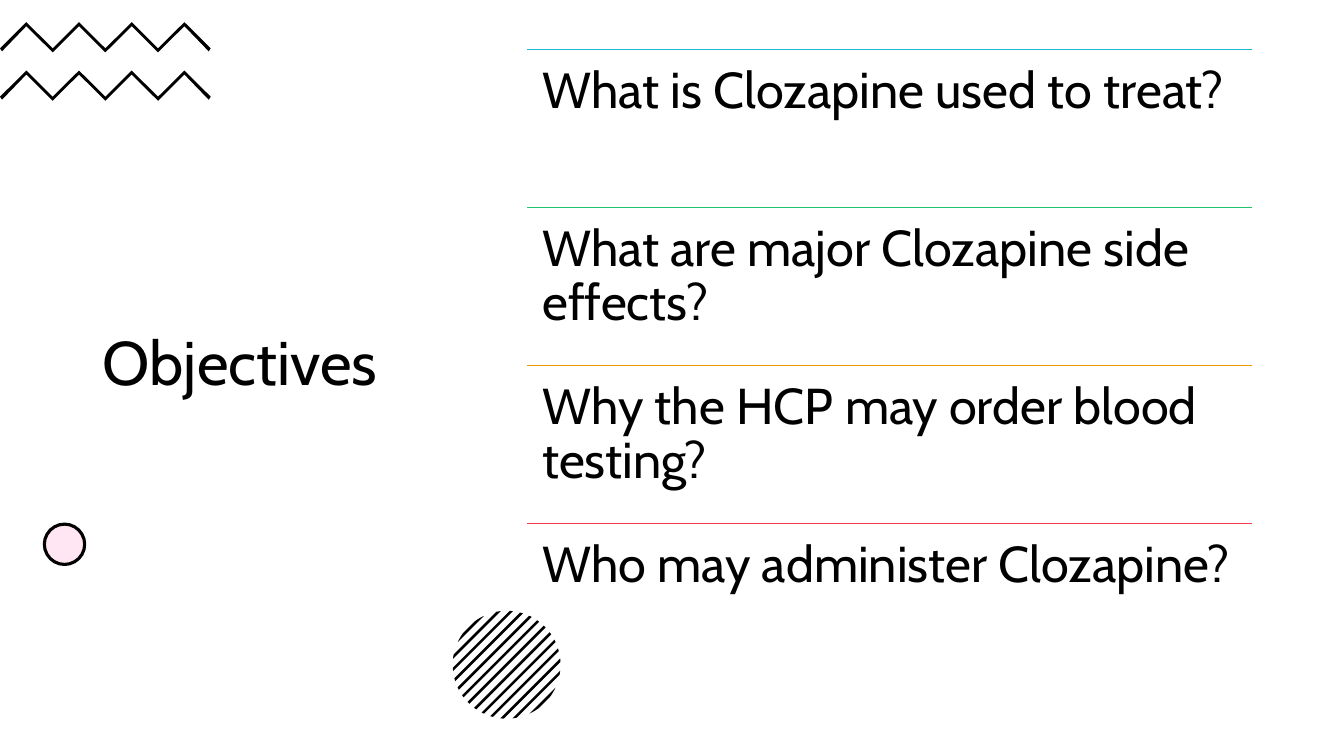
"""Build the Objectives slide with four ruled questions."""
import math
from dataclasses import dataclass

import pptx
import pptx.dml.color
import pptx.enum.shapes
import pptx.enum.text
import pptx.util
from lxml import etree

Inches = pptx.util.Inches
Pt = pptx.util.Pt


@dataclass(frozen=True)
class Theme:
    """Colours, font and sizes of the slide."""
    font: str = "Cabin"
    title_size: int = 44
    question_size: int = 36
    ink: str = "000000"
    paper: str = "FFFFFF"
    blush: str = "FFE6F2"
    rules: tuple = ("1EB9D3", "21C46B", "EA9600", "F43B56")


THEME = Theme()
QUESTIONS = (
    "What is Clozapine used to treat?",
    "What are major Clozapine side effects?",
    "Why the HCP may order blood testing?",
    "Who may administer Clozapine?",
)


def rgb(value):
    """Return the colour for a hex string."""
    return pptx.dml.color.RGBColor.from_string(value)


def write(frame, text, size):
    """Put one left-aligned paragraph in a text frame."""
    frame.word_wrap = True
    frame.text = text
    paragraph = frame.paragraphs[0]
    paragraph.alignment = pptx.enum.text.PP_ALIGN.LEFT
    paragraph.line_spacing = 0.9
    font = paragraph.runs[0].font
    font.name = THEME.font
    font.size = Pt(size)
    font.color.rgb = rgb(THEME.ink)


def add_outline(slide, points):
    """Draw a closed ink-filled outline through points given in inches."""
    corners = [(Inches(x), Inches(y)) for x, y in points]
    builder = slide.shapes.build_freeform(*corners[0])
    builder.add_line_segments(corners[1:], close=True)
    outline = builder.convert_to_shape()
    outline.shadow.inherit = False
    outline.fill.solid()
    outline.fill.fore_color.rgb = rgb(THEME.ink)
    outline.line.fill.background()


def add_title(slide, left, top, width, height):
    """Place the slide title in its box."""
    title = slide.shapes.title
    title.left, title.top = Inches(left), Inches(top)
    title.width, title.height = Inches(width), Inches(height)
    write(title.text_frame, "Objectives", THEME.title_size)
    title.text_frame.vertical_anchor = pptx.enum.text.MSO_ANCHOR.MIDDLE


def add_zigzags(slide, left, top, width, height):
    """Draw two zigzag bands, one at each end of the box."""
    band, stroke, inset, bends = 0.3, 0.04, 0.02, 8
    step = width / bends
    for band_top in (top, top + height - band):
        upper = [(left + i * step, band_top + (0 if i % 2 else band - stroke))
                 for i in range(bends + 1)]
        lower = [(x, y + stroke) for x, y in upper[1:-1]]
        tips = [(left + inset, band_top + band - 0.01),
                (left + width - inset, band_top + band - 0.01)]
        add_outline(slide, upper + [tips[1]] + lower[::-1] + [tips[0]])


def add_dot(slide, left, top, size):
    """Draw the blush dot with its ink outline."""
    dot = slide.shapes.add_shape(
        pptx.enum.shapes.MSO_SHAPE.OVAL,
        Inches(left), Inches(top), Inches(size), Inches(size))
    dot.shadow.inherit = False
    dot.fill.solid()
    dot.fill.fore_color.rgb = rgb(THEME.blush)
    dot.line.color.rgb = rgb(THEME.ink)
    dot.line.width = Pt(2.25)


def add_hatched_disc(slide, left, top, size):
    """Fill a disc with rising diagonal stripes."""
    radius = size / 2
    pitch, half_stripe, reach = 0.086, 0.013, 6
    for stripe in range(-reach, reach + 1):
        lower_ends, upper_ends = [], []
        for part in (-1, -0.5, 0, 0.5, 1):
            offset = stripe * pitch + part * half_stripe
            half_chord = math.sqrt(max(radius ** 2 - offset ** 2, 0))
            for ends, reach_along in ((lower_ends, -half_chord), (upper_ends, half_chord)):
                ends.append((left + radius + (offset + reach_along) / math.sqrt(2),
                             top + radius + (offset - reach_along) / math.sqrt(2)))
        add_outline(slide, lower_ends + upper_ends[::-1])


def add_questions(slide, left, top, width, height):
    """Stack the questions in equal rows, each under a coloured rule."""
    row_height = height / len(QUESTIONS)
    for row, (question, colour) in enumerate(zip(QUESTIONS, THEME.rules)):
        row_top = Inches(top + row * row_height)
        rule = slide.shapes.add_connector(
            pptx.enum.shapes.MSO_CONNECTOR.STRAIGHT,
            Inches(left), row_top, Inches(left + width), row_top)
        rule.line.color.rgb = rgb(colour)
        rule.line.width = Pt(1)
        etree.SubElement(rule._element.spPr, pptx.oxml.ns.qn("a:effectLst"))
        frame = slide.shapes.add_textbox(
            Inches(left), row_top, Inches(width), Inches(row_height)).text_frame
        frame.margin_left = frame.margin_right = Inches(0.15)
        frame.margin_top = frame.margin_bottom = Inches(0.15)
        write(frame, question, THEME.question_size)


def main():
    """Build and save the presentation."""
    deck = pptx.Presentation()
    deck.slide_width, deck.slide_height = Inches(13.33), Inches(7.5)
    slide = deck.slides.add_slide(deck.slide_layouts.get_by_name("Title Only"))
    slide.background.fill.solid()
    slide.background.fill.fore_color.rgb = rgb(THEME.paper)
    add_title(slide, 0.92, 1.31, 3.5, 4.63)
    add_zigzags(slide, 0, 0.22, 2.09, 0.78)
    add_dot(slide, 0.44, 5.2, 0.4)
    add_hatched_disc(slide, 4.49, 6.06, 1.07)
    add_questions(slide, 5.23, 0.49, 7.19, 6.27)
    deck.save("out.pptx")


if __name__ == "__main__":
    main()
